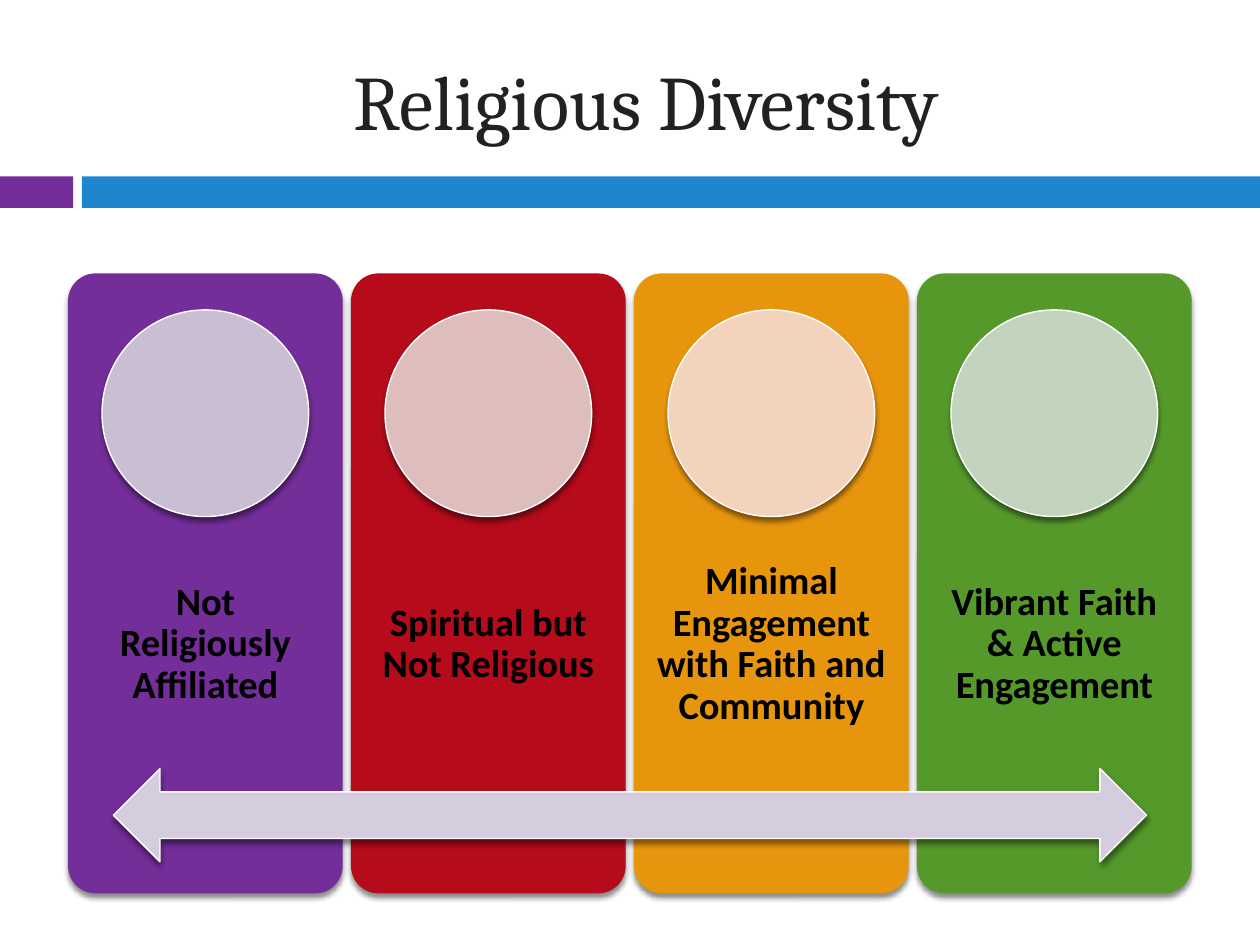
from lxml.etree import SubElement
from pptx import Presentation
from pptx.dml.color import RGBColor
from pptx.enum.shapes import MSO_SHAPE as Shape
from pptx.enum.text import MSO_ANCHOR as Anchor, PP_ALIGN as Align
from pptx.oxml.ns import qn
from pptx.util import Inches, Pt

TITLE = "Religious Diversity"
BANDS = [(0, 0.58, "732E9A"), (0.65, 9.35, "1D86CD")]
GROUPS = [
    ("Not Religiously Affiliated", "732E9A", "C9BED4"),
    ("Spiritual but Not Religious", "B50B1B", "DEBDBD"),
    ("Minimal Engagement with Faith and Community", "E8950E", "F4D3BD"),
    ("Vibrant Faith\n& Active Engagement", "55992B", "C3D4BE"),
]
ARROW_FILL = "D5CDDE"
CARD_LEFT, CARD_TOP, CARD_WIDTH, CARD_HEIGHT = 0.54, 2.17, 2.18, 4.92
CARD_STEP = 2.246
CIRCLE_TOP, CIRCLE_SIZE = 2.46, 1.64
LABEL_TOP, LABEL_HEIGHT, LABEL_INSET = 4.13, 1.97, 0.17


def color(value):
    return RGBColor.from_string(value)


def add_shape(page, kind, left, top, width, height, fill, outlined=False):
    shape = page.shapes.add_shape(
        kind, Inches(left), Inches(top), Inches(width), Inches(height))
    shape.shadow.inherit = False
    shape.fill.solid()
    shape.fill.fore_color.rgb = color(fill)
    if outlined:
        shape.line.color.rgb = color("FFFFFF")
        shape.line.width = Pt(0.79)
    else:
        shape.line.fill.background()
    return shape


def add_shadow(shape):
    effects = shape.element.spPr.find(qn("a:effectLst"))
    shadow = SubElement(effects, qn("a:outerShdw"), blurRad=str(Pt(3)),
                        dist=str(Pt(2.4)), dir="5400000", rotWithShape="0")
    tint = SubElement(shadow, qn("a:srgbClr"), val="000000")
    SubElement(tint, qn("a:alpha"), val="45000")


def add_text(page, text, left, top, width, height, font, size, fill):
    box = page.shapes.add_textbox(
        Inches(left), Inches(top), Inches(width), Inches(height))
    frame = box.text_frame
    frame.word_wrap = True
    frame.vertical_anchor = Anchor.MIDDLE
    para = frame.paragraphs[0]
    para.text = text
    para.alignment = Align.CENTER
    for span in para.runs:
        span.font.name = font
        span.font.size = Pt(size)
        span.font.color.rgb = color(fill)
    return frame


def add_card(page, left, label, card_fill, circle_fill):
    card = add_shape(page, Shape.ROUNDED_RECTANGLE, left, CARD_TOP,
                     CARD_WIDTH, CARD_HEIGHT, card_fill)
    card.adjustments[0] = 0.1
    add_shadow(card)

    frame = add_text(page, label, left, LABEL_TOP, CARD_WIDTH, LABEL_HEIGHT,
                     "Calibri", 22, "000000")
    frame.margin_left = frame.margin_right = Inches(LABEL_INSET)
    frame.margin_top = frame.margin_bottom = Inches(LABEL_INSET)
    para = frame.paragraphs[0]
    para.line_spacing = 0.9
    for span in para.runs:
        span.font.bold = True

    circle_left = left + (CARD_WIDTH - CIRCLE_SIZE) / 2
    add_shadow(add_shape(page, Shape.OVAL, circle_left, CIRCLE_TOP,
                         CIRCLE_SIZE, CIRCLE_SIZE, circle_fill, True))


def main():
    deck = Presentation()
    deck.slide_width, deck.slide_height = Inches(10), Inches(7.5)
    page = deck.slides.add_slide(deck.slide_layouts[6])

    for left, width, fill in BANDS:
        add_shape(page, Shape.RECTANGLE, left, 1.4, width, 0.25, fill)
    add_text(page, TITLE, 0.67, 0.25, 8.92, 1.08, "Cambria", 44, "212121")

    for index, group in enumerate(GROUPS):
        add_card(page, CARD_LEFT + index * CARD_STEP, *group)
    add_shadow(add_shape(page, Shape.LEFT_RIGHT_ARROW, 0.9, 6.1, 8.2, 0.74,
                         ARROW_FILL, True))

    deck.save("out.pptx")


if __name__ == "__main__":
    main()
